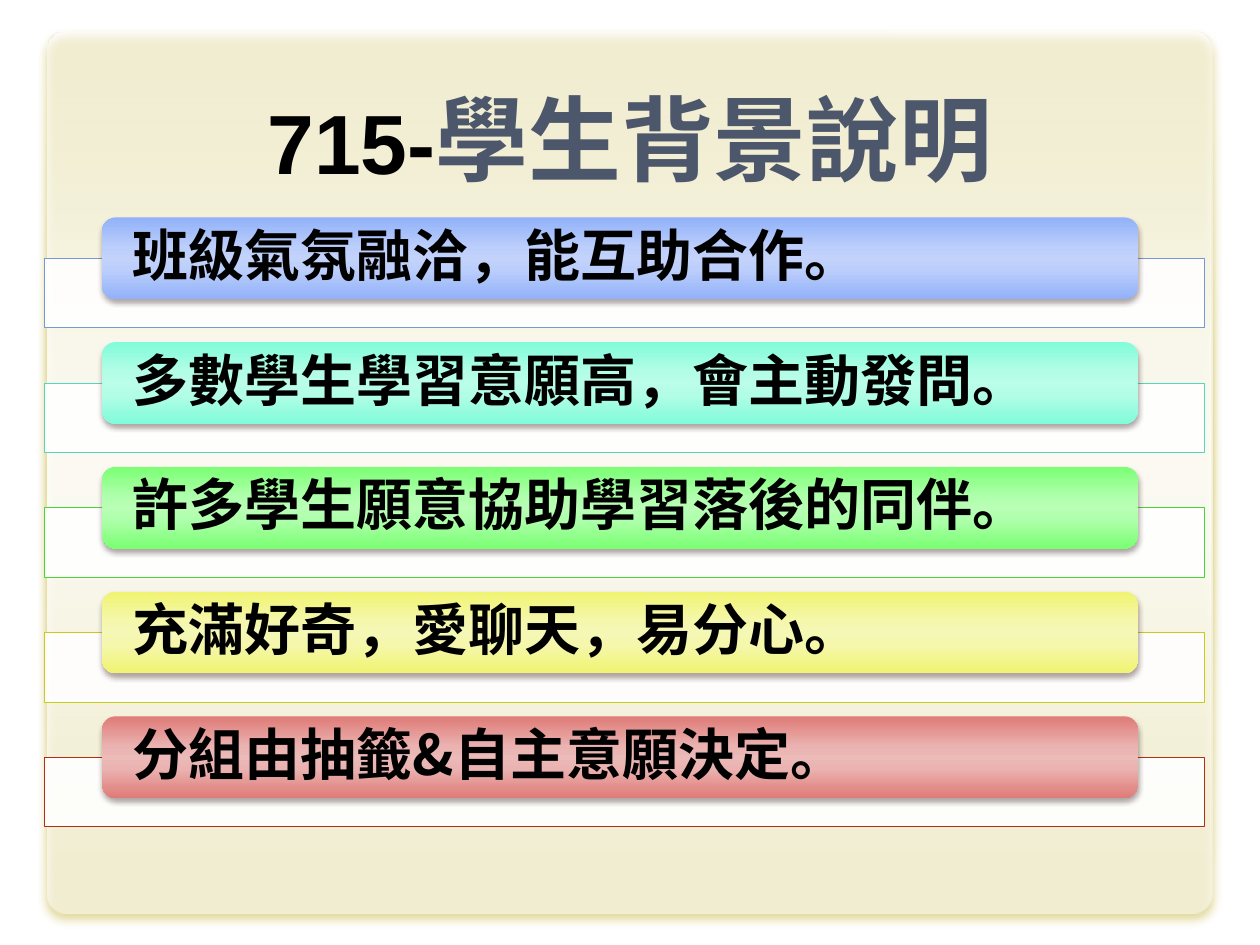
from lxml import etree
from pptx import Presentation
from pptx.dml.color import RGBColor
from pptx.enum.shapes import MSO_SHAPE
from pptx.enum.text import MSO_ANCHOR, MSO_AUTO_SIZE, PP_ALIGN
from pptx.oxml.ns import qn
from pptx.util import Inches, Pt

RECT, ROUND = MSO_SHAPE.RECTANGLE, MSO_SHAPE.ROUNDED_RECTANGLE
MIDDLE, BOTTOM = MSO_ANCHOR.MIDDLE, MSO_ANCHOR.BOTTOM
LEFT, CENTER = PP_ALIGN.LEFT, PP_ALIGN.CENTER
FIXED = MSO_AUTO_SIZE.NONE

WHITE, BLACK = RGBColor(255, 255, 255), RGBColor(0, 0, 0)
SLATE = RGBColor(0x4C, 0x57, 0x6B)
GOLD = RGBColor(0xC3, 0xB1, 0x31)
DARK = RGBColor(0x1A, 0, 0)
LATIN, CJK = "Arial", "Noto Sans CJK SC"

ROWS = [
    ("班級氣氛融洽，能互助合作。", "7598D9", "91B1F9", "BCCEFB", "C2D2FB"),
    ("多數學生學習意願高，會主動發問。", "55D7BA", "80FCD9", "B3FDE6", "BAFDE8"),
    ("許多學生願意協助學習落後的同伴。", "45D834", "7AFF73", "B0FFAD", "B8FEB5"),
    ("充滿好奇，愛聊天，易分心。", "C7CA20", "F0F472", "F5F7AD", "F5F8B5"),
    ("分組由抽籤&自主意願決定。", "B32C16", "DF7B77", "EAB2B0", "ECBAB8"),
]


def node(root, tag, **attrs):
    return etree.SubElement(root, qn(tag), {k: str(v) for k, v in attrs.items()})


def tint(root, color, alpha):
    part = node(root, "a:srgbClr", val=color)
    node(part, "a:alpha", val=alpha * 1000)


def add_box(slide, kind, box):
    shape = slide.shapes.add_shape(kind, *(Inches(v) for v in box))
    shape.shadow.inherit = False
    return shape


def shade(shape, stops):
    shape.line.fill.background()
    grad = etree.Element(qn("a:gradFill"), rotWithShape="1")
    group = node(grad, "a:gsLst")
    for spot, color, alpha in stops:
        tint(node(group, "a:gs", pos=spot * 1000), color, alpha)
    node(grad, "a:lin", ang=90 * 60000, scaled=0)
    shape._element.spPr.find(qn("a:ln")).addprevious(grad)


def cast(shape, color, alpha, blur, dist):
    effects = shape._element.spPr.find(qn("a:effectLst"))
    shadow = node(effects, "a:outerShdw", blurRad=Pt(blur), dist=Pt(dist),
                  dir=90 * 60000, algn="ctr", rotWithShape=0)
    tint(shadow, color, alpha)


def style(font, name, size, color):
    font.size, font.bold, font.name = Pt(size), True, name
    font.color.rgb = color
    node(font._element, "a:ea", typeface=name)


def add_panel(slide, box):
    panel = add_box(slide, ROUND, box)
    panel.adjustments[0] = 0.022
    fades = [(0, 50), (35, 87), (50, 92), (60, 89), (100, 55)]
    shade(panel, [(spot, WHITE, alpha) for spot, alpha in fades])
    cast(panel, GOLD, 90, 5, 3.6)
    panel._element.getparent().insert(2, panel._element)


def add_title(slide, box):
    title = slide.shapes.title
    title.left, title.top, title.width, title.height = (Inches(v) for v in box)
    frame = title.text_frame
    frame.auto_size, frame.vertical_anchor = FIXED, BOTTOM
    para = frame.paragraphs[0]
    para.alignment = CENTER
    for text, name, size, color in (("715-", LATIN, 48, BLACK),
                                    ("學生背景說明", CJK, 53, SLATE)):
        run = para.add_run()
        run.text = text
        style(run.font, name, size, color)


def add_row(slide, box, text, edge, outer, soft, mid):
    left, top, width, height = box
    back = add_box(slide, RECT, (left, top + height * 0.37, width, height * 0.63))
    back.fill.solid()
    back.fill.fore_color.rgb = WHITE
    paint = back._element.spPr.find(qn("a:solidFill"))
    node(paint[0], "a:alpha", val=90000)
    back.line.color.rgb = RGBColor.from_string(edge)
    back.line.width = Pt(0.39)

    bar = add_box(slide, ROUND, (left + width * 0.05, top, width * 0.8925, height * 0.74))
    tones = [(0, outer), (37, soft), (50, mid), (64, soft), (100, outer)]
    shade(bar, [(spot, RGBColor.from_string(tone), 100) for spot, tone in tones])
    cast(bar, DARK, 35, 3.1, 2)
    frame = bar.text_frame
    frame.word_wrap, frame.vertical_anchor = True, MIDDLE
    frame.margin_left = frame.margin_right = Inches(0.21)
    frame.margin_top = frame.margin_bottom = 0
    para = frame.paragraphs[0]
    para.text, para.alignment = text, LEFT
    para.line_spacing, para.space_after = 0.9, Pt(11)
    style(para.font, CJK, 32, BLACK)


def add_list(slide, box, rows):
    left, top, width, height = box
    pitch = height / len(rows)
    for i, row in enumerate(rows):
        add_row(slide, (left, top + i * pitch, width, pitch * 0.885), *row)


def main():
    deck = Presentation()
    wide, high = 10, 7.5
    deck.slide_width, deck.slide_height = Inches(wide), Inches(high)
    slide = deck.slides.add_slide(deck.slide_layouts[5])
    add_panel(slide, (wide * 0.0375, high / 30, wide * 0.925, high * 14 / 15))
    add_title(slide, (wide * 0.05, high * 0.044, wide * 0.9, high / 6))
    add_list(slide, (wide * 0.035, high * 0.23, wide * 0.921, high * 0.66), ROWS)
    deck.save("out.pptx")


if __name__ == "__main__":
    main()
